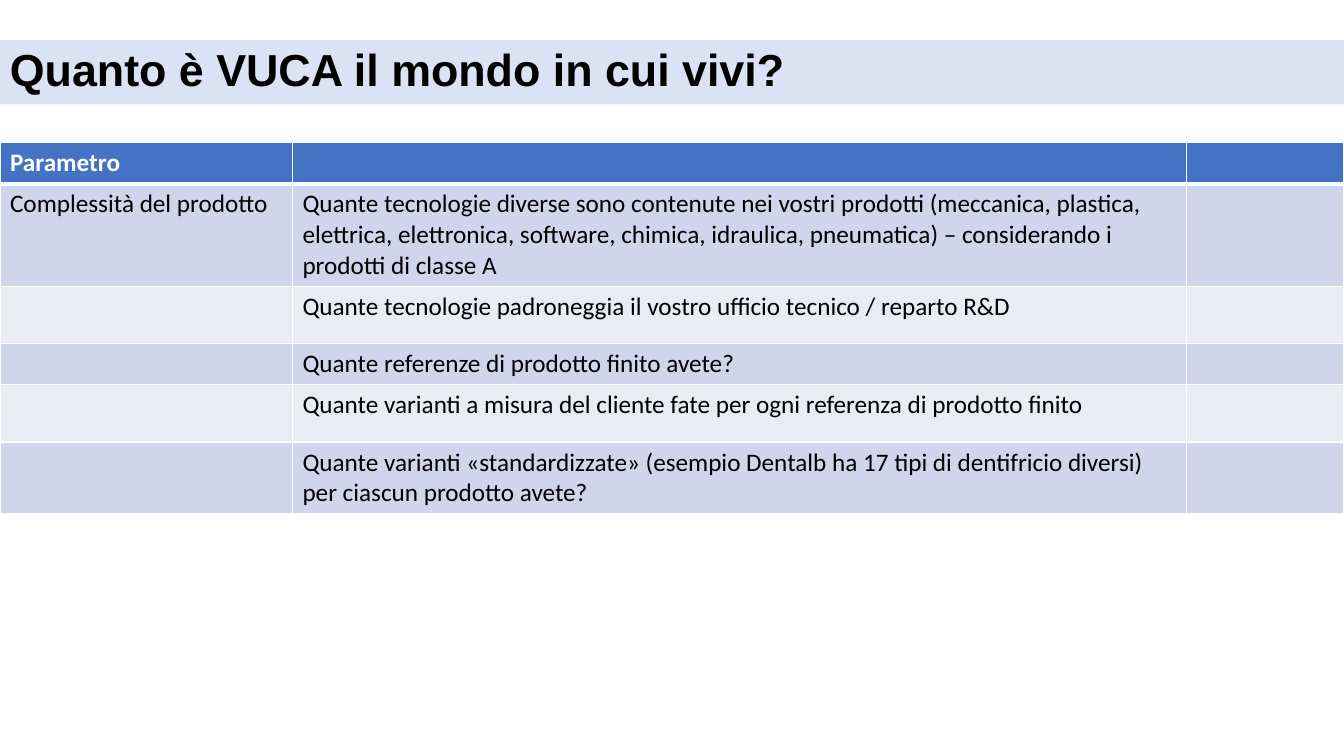
from lxml import etree
from pptx import Presentation
from pptx.dml.color import RGBColor
from pptx.enum import shapes, text
from pptx.oxml import ns
from pptx.util import Cm, Pt


def color(hex_code):
    return RGBColor.from_string(hex_code)


def write(frame, content, size=18, font="Calibri", ink="000000", bold=False, spacing=None):
    paragraph = frame.paragraphs[0]
    paragraph.alignment = text.PP_ALIGN.LEFT
    paragraph.line_spacing = spacing
    paragraph.font.size = Pt(size)
    if content:
        run = paragraph.add_run()
        run.text = content
        run.font.size = Pt(size)
        run.font.name = font
        run.font.bold = bold
        run.font.color.rgb = color(ink)


presentation = Presentation()
presentation.slide_width = Cm(33.87)
presentation.slide_height = Cm(19.05)
slide = presentation.slides.add_slide(presentation.slide_layouts[6])

# Table of questions
rows = [
    ("Parametro", "", ""),
    ("Complessità del prodotto",
     "Quante tecnologie diverse sono contenute nei vostri prodotti (meccanica, plastica, "
     "elettrica, elettronica, software, chimica, idraulica, pneumatica) – considerando i "
     "prodotti di classe A", ""),
    ("", "Quante tecnologie padroneggia il vostro ufficio tecnico / reparto R&D", ""),
    ("", "Quante referenze di prodotto finito avete?", ""),
    ("", "Quante varianti a misura del cliente fate per ogni referenza di prodotto finito", ""),
    ("", "Quante varianti «standardizzate» (esempio Dentalb ha 17 tipi di dentifricio diversi) "
     "per ciascun prodotto avete?", ""),
]
column_widths = [7.37, 22.53, 3.97]
row_heights = [1.03, 2.03, 1.45, 1.03, 1.45, 1.45]

table = slide.shapes.add_table(
    len(rows), len(column_widths), Cm(0), Cm(3.6),
    Cm(sum(column_widths)), Cm(sum(row_heights))).table
for column, width in zip(table.columns, column_widths):
    column.width = Cm(width)
for row, height in zip(table.rows, row_heights):
    row.height = Cm(height)

for row_index, row in enumerate(rows):
    header = row_index == 0
    fill = "4472C4" if header else ("E9EBF5", "CFD5EA")[row_index % 2]
    for column_index, content in enumerate(row):
        cell = table.cell(row_index, column_index)
        write(cell.text_frame, content, ink="FFFFFF" if header else "000000", bold=header)
        cell.fill.solid()
        cell.fill.fore_color.rgb = color(fill)

        # White borders, thicker between the header and the body
        properties = cell._tc.get_or_add_tcPr()
        thick_side = {0: "lnB", 1: "lnT"}.get(row_index)
        for position, side in enumerate(("lnL", "lnR", "lnT", "lnB")):
            line = etree.Element(ns.qn("a:" + side), w=str(Pt(3 if side == thick_side else 1)))
            solid = etree.SubElement(line, ns.qn("a:solidFill"))
            etree.SubElement(solid, ns.qn("a:srgbClr"), val="FFFFFF")
            properties.insert(position, line)

# Title band
title = slide.shapes.add_shape(
    shapes.MSO_SHAPE.RECTANGLE, Cm(0), Cm(1.01), presentation.slide_width, Cm(1.62))
title.shadow.inherit = False
title.fill.solid()
title.fill.fore_color.rgb = color("DAE3F3")
title.line.fill.background()
title.text_frame.word_wrap = True
title.text_frame.vertical_anchor = text.MSO_ANCHOR.MIDDLE
write(title.text_frame, "Quanto è VUCA il mondo in cui vivi?",
      size=32, font="Arial", bold=True, spacing=0.9)

presentation.save("out.pptx")
